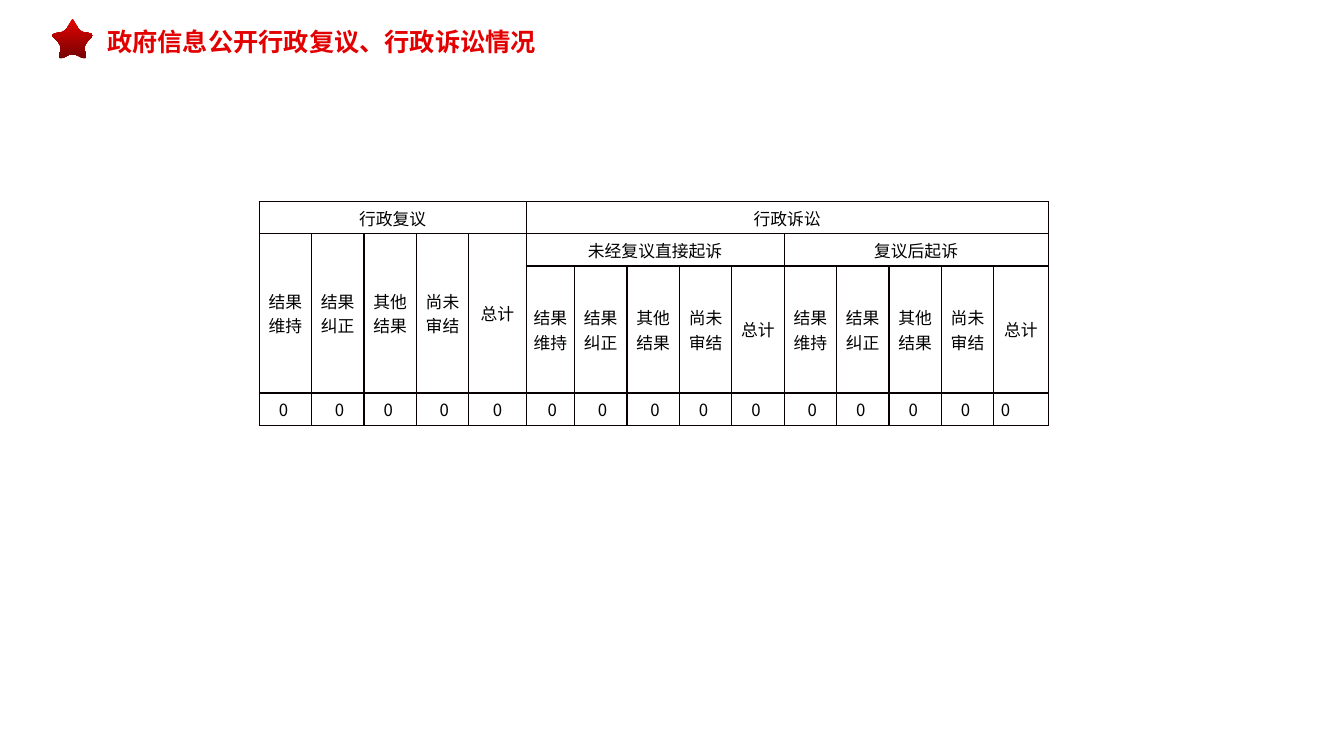
import pptx
import pptx.util
import pptx.dml.color
import pptx.enum.text
import pptx.oxml
import pptx.oxml.ns
from lxml import etree

Inches, Pt = pptx.util.Inches, pptx.util.Pt
RGB = pptx.dml.color.RGBColor.from_string
ALIGN = pptx.enum.text.PP_ALIGN
MIDDLE = pptx.enum.text.MSO_ANCHOR.MIDDLE

THEME = {
    "red": "E30000", "dark_red": "760303", "ink": "000000", "border": "080000",
    "title_font": "Arial", "body_font": "Noto Sans CJK SC",
    "title_size": 18, "body_size": 12, "border_width": 1,
}


def style_text(paragraph, font_name, size, color, bold=False, align=ALIGN.CENTER):
    paragraph.alignment = align
    for run in paragraph.runs:
        run.font.name = font_name
        run.font.size = Pt(size)
        run.font.bold = bold
        run.font.color.rgb = RGB(color)
        east_asian = etree.SubElement(run.font._element, pptx.oxml.ns.qn("a:ea"))
        east_asian.set("typeface", THEME["body_font"])


def curve(start, c1, c2, end, steps=8):
    """Points along a cubic curve, without its start."""
    points = []
    for step in range(1, steps + 1):
        t = step / steps
        weights = ((1 - t) ** 3, 3 * t * (1 - t) ** 2, 3 * t * t * (1 - t), t ** 3)
        points.append(tuple(sum(w * p[axis] for w, p in zip(weights, (start, c1, c2, end)))
                            for axis in (0, 1)))
    return points


presentation = pptx.Presentation()
presentation.slide_width, presentation.slide_height = Inches(13.33), Inches(7.5)
slide = presentation.slides.add_slide(presentation.slide_layouts[6])

# Heading
heading = slide.shapes.add_textbox(Inches(0.93), Inches(0.21), Inches(4.52), Inches(0.4))
heading.text_frame.word_wrap = False
heading.text_frame.text = "政府信息公开行政复议、行政诉讼情况"
style_text(heading.text_frame.paragraphs[0], THEME["title_font"], THEME["title_size"],
           THEME["red"], bold=True)

# Rounded star in hundredths of an inch: right half as curves, left half mirrored
star_axis = 72
star_detail = 100
right_curves = [
    ((72, 19), (73, 19), (73, 20), (74, 22)),
    ((77, 27), (78, 29), (81, 32), (84, 32)),
    ((89, 33), (92, 34), (93, 35), (91, 37)),
    ((87, 41), (85, 43), (83, 47), (84, 49)),
    ((85, 55), (86, 58), (84, 59), (81, 57)),
    ((77, 55), (75, 54), (74, 54), (72, 54)),
]
right_half = [point for c in right_curves for point in [c[0]] + curve(*c)]
left_half = [(2 * star_axis - x, y) for x, y in reversed(right_half[1:-1])]
vertices = [(x * star_detail, y * star_detail) for x, y in right_half + left_half]
outline = slide.shapes.build_freeform(*vertices[0], scale=Inches(0.01) / star_detail)
outline.add_line_segments(vertices[1:], close=True)
star = outline.convert_to_shape()
star.shadow.inherit = False
star.line.fill.background()
star.fill.gradient()
star.fill.gradient_angle = 270
for stop, color in zip(star.fill.gradient_stops, ("red", "dark_red")):
    stop.color.rgb = RGB(THEME[color])

# Table grid
column_widths = [0.52] * 4 + [0.57, 0.48] + [0.52] * 8 + [0.54]
row_heights = [0.32, 0.32, 1.26, 0.32]
grid = slide.shapes.add_table(len(row_heights), len(column_widths), Inches(2.57), Inches(2),
                              Inches(sum(column_widths)), Inches(sum(row_heights)))
cases = grid.table
cases.first_row = cases.horz_banding = False
for column, width in zip(cases.columns, column_widths):
    column.width = Inches(width)
for row, height in zip(cases.rows, row_heights):
    row.height = Inches(height)

# Wording by row and column; each of three groups has the same five outcomes
outcomes = ["结果维持", "结果纠正", "其他结果", "尚未审结", "总计"]
counts = ["0 ", " 0", "0 ", " 0", "0", " 0", " 0", " 0", "0 ", "0 ",
          " 0", "0 ", "0 ", "0 ", "0"]
group = len(outcomes)
last = len(counts) - 1
wording = {(0, 0): "行政复议", (0, group): "行政诉讼",
           (1, group): "未经复议直接起诉", (1, 2 * group): "复议后起诉"}
for column, count in enumerate(counts):
    wording[1 if column < group else 2, column] = outcomes[column % group]
    wording[3, column] = count

# Merged headers
merges = [((0, 0), (0, group - 1)), ((0, group), (0, last)),
          ((1, group), (1, 2 * group - 1)), ((1, 2 * group), (1, last))]
merges += [((1, column), (2, column)) for column in range(group)]
for first, final in merges:
    cases.cell(*first).merge(cases.cell(*final))

# Cell borders, fill and text
for row in range(len(row_heights)):
    for column in range(len(column_widths)):
        cell = cases.cell(row, column)
        cell.vertical_anchor = MIDDLE
        cell.margin_left = cell.margin_right = Inches(0.07)
        cell.margin_top = cell.margin_bottom = 0
        properties = cell._tc.get_or_add_tcPr()
        for side in ("lnL", "lnR", "lnT", "lnB"):
            properties.append(pptx.oxml.parse_xml(
                f'<a:{side} {pptx.oxml.ns.nsdecls("a")} w="{Pt(THEME["border_width"])}">'
                f'<a:solidFill><a:srgbClr val="{THEME["border"]}"/></a:solidFill></a:{side}>'))
        cell.fill.background()
        if (row, column) in wording:
            cell.text_frame.text = wording[row, column]
            align = ALIGN.LEFT if (row, column) == (3, last) else ALIGN.CENTER
            style_text(cell.text_frame.paragraphs[0], THEME["body_font"], THEME["body_size"],
                       THEME["ink"], align=align)

presentation.save("out.pptx")
